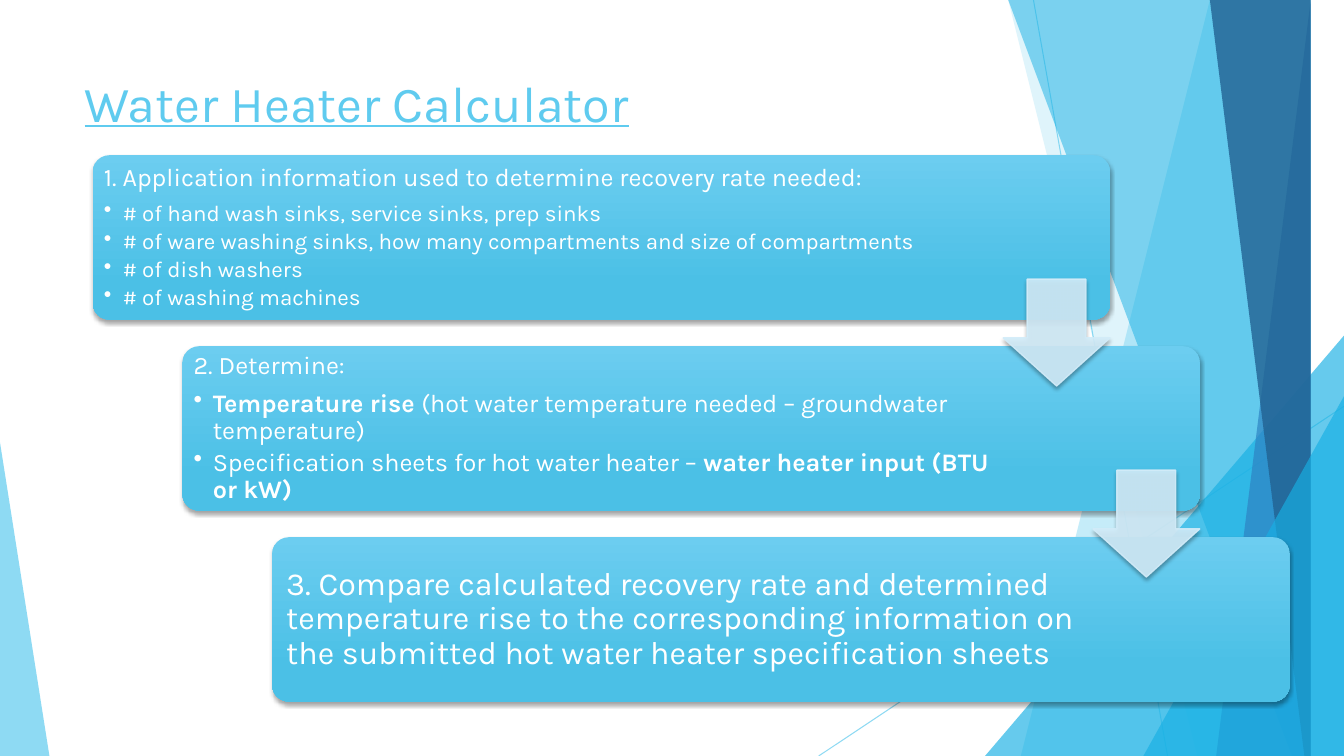
from dataclasses import dataclass

from lxml import etree
from pptx import Presentation
from pptx import util as u
from pptx.dml.color import RGBColor
from pptx.enum import shapes, text
from pptx.oxml import ns


@dataclass(frozen=True)
class Theme:
    font: str = "Karla"
    sky: str = "5FCBEF"
    cyan: str = "17B0E4"
    blue: str = "2E83C3"
    navy: str = "226292"
    white: str = "FFFFFF"
    arrow: str = "D2ECF9"
    shadow: str = "000000"
    card_gradient: tuple = ((0, "6CCDF0"), (0.78, "4BC0E6"))
    title_size: int = 36
    heading_size: int = 18
    small_size: int = 16
    conclusion_size: int = 23
    line_height: float = 1.17


THEME = Theme()
WIDTH, HEIGHT = 13.33, 7.5
SHAPE = shapes.MSO_SHAPE
CARD_WIDTH, CARD_HEIGHT = 10.09, 1.63
CARD_LEFT, CARD_TOP = 0.92, 1.54
STEP_X, STEP_Y = 0.89, 1.895
ARROW_SIZE = 1.06

# Each step: heading, heading size, bullet size, text width, inset, bullets of (words, bold) runs
STEPS = [
    ("1. Application information used to determine recovery rate needed:",
     THEME.heading_size, THEME.small_size, 8.33, 0.07,
     [[("# of hand wash sinks, service sinks, prep sinks", False)],
      [("# of ware washing sinks, how many compartments and size of compartments", False)],
      [("# of dish washers", False)],
      [("# of washing machines", False)]]),
    ("2. Determine:", THEME.heading_size, THEME.heading_size, 8.05, 0.07,
     [[("Temperature rise ", True),
       ("(hot water temperature needed – groundwater temperature)", False)],
      [("Specification sheets for hot water heater – ", False),
       ("water heater input (BTU or kW)", True)]]),
    ("3. Compare calculated recovery rate and determined temperature rise to the "
     "corresponding information on the submitted hot water heater specification sheets",
     THEME.conclusion_size, THEME.conclusion_size, 8.05, 0.1, []),
]


def set_all(target, values):
    for name, value in values.items():
        setattr(target, name, value)


def inches(*lengths):
    return [u.Inches(length) for length in lengths]


def set_alpha(shape, percent):
    for color in shape._element.spPr.iter(ns.qn("a:srgbClr")):
        etree.SubElement(color, ns.qn("a:alpha"), val=str(percent * 1000))


def paint(shape, color, alpha, outlined=False):
    shape.shadow.inherit = False
    shape.fill.solid()
    shape.fill.fore_color.rgb = RGBColor.from_string(color)
    if outlined:
        shape.line.color.rgb = RGBColor.from_string(color)
        shape.line.width = u.Pt(1)
    else:
        shape.line.fill.background()
    set_alpha(shape, alpha)


def cast_shadow(shape):
    shape.shadow.inherit = False
    effects = shape._element.spPr.find(ns.qn("a:effectLst"))
    outer = etree.SubElement(effects, ns.qn("a:outerShdw"), blurRad=str(u.Pt(3)),
                             dist=str(u.Pt(2)), dir="5400000", rotWithShape="0")
    color = etree.SubElement(outer, ns.qn("a:srgbClr"), val=THEME.shadow)
    etree.SubElement(color, ns.qn("a:alpha"), val="35000")


def add_ray(slide, start, end):
    ray = slide.shapes.add_connector(shapes.MSO_CONNECTOR.STRAIGHT, *inches(*start, *end))
    ray.line.color.rgb = RGBColor.from_string(THEME.sky)
    ray.line.width = u.Pt(0.75)
    set_alpha(ray, 70)
    etree.SubElement(ray._element.spPr, ns.qn("a:effectLst"))


def add_facet(slide, top_x, bottom_x, color, alpha):
    """Fill from a slanted left edge to the right side of the slide."""
    builder = slide.shapes.build_freeform(top_x, 0, scale=u.Inches(1))
    builder.add_line_segments([(WIDTH, 0), (WIDTH, HEIGHT), (bottom_x, HEIGHT)])
    paint(builder.convert_to_shape(), color, alpha)


def add_corner(slide, left, top, width, apex, color, alpha):
    """Stand a triangle on the bottom edge of the slide."""
    corner = slide.shapes.add_shape(SHAPE.ISOSCELES_TRIANGLE,
                                    *inches(left, top, width, HEIGHT - top))
    corner.adjustments[0] = apex
    paint(corner, color, alpha)


def add_backdrop(slide):
    add_ray(slide, (10.25, 0), (11.58, HEIGHT))
    add_ray(slide, (WIDTH, 4.03), (8.12, HEIGHT))
    add_facet(slide, 12.28, 10.04, THEME.sky, 36)
    add_facet(slide, 10.5, 11.83, THEME.sky, 20)
    add_corner(slide, 9.77, 3.33, 3.56, 1, THEME.cyan, 66)
    add_facet(slide, 10.21, 12.91, THEME.cyan, 50)
    add_facet(slide, 13.03, 11.92, THEME.blue, 70)
    add_facet(slide, 11.96, 13.18, THEME.navy, 80)
    add_corner(slide, 11.34, 3.93, 1.99, 1, THEME.cyan, 66)
    add_corner(slide, 0, 4.39, 0.49, 0, THEME.sky, 70)


def add_run(paragraph, words, size, color, **styles):
    run = paragraph.add_run()
    run.text = words
    set_all(run.font, dict(name=THEME.font, size=u.Pt(size), **styles))
    run.font.color.rgb = RGBColor.from_string(color)


def add_title(slide, left, top, width, height):
    frame = slide.shapes.add_textbox(*inches(left, top, width, height)).text_frame
    set_all(frame, dict(word_wrap=True, vertical_anchor=text.MSO_ANCHOR.TOP))
    add_run(frame.paragraphs[0], "Water Heater Calculator", THEME.title_size,
            THEME.sky, underline=True)


def space_lines(paragraph, size, share):
    set_all(paragraph, dict(line_spacing=0.9,
                            space_after=u.Pt(round(size * THEME.line_height * share, 1))))


def add_step_text(slide, left, top, step):
    heading, heading_size, bullet_size, width, inset, bullets = step
    box = slide.shapes.add_textbox(*inches(left + 0.04, top + 0.05, width, CARD_HEIGHT - 0.1))
    frame = box.text_frame
    margins = {f"margin_{side}": u.Inches(inset) for side in ("left", "top", "right", "bottom")}
    set_all(frame, dict(word_wrap=True, vertical_anchor=text.MSO_ANCHOR.MIDDLE, **margins))
    space_lines(frame.paragraphs[0], heading_size, 0.35)
    add_run(frame.paragraphs[0], heading, heading_size, THEME.white)
    for runs in bullets:
        paragraph = frame.add_paragraph()
        paragraph.level = 1
        space_lines(paragraph, bullet_size, 0.15)
        properties = paragraph._p.get_or_add_pPr()
        properties.set("marL", str(u.Inches(0.19)))
        properties.set("indent", str(u.Inches(-0.19)))
        etree.SubElement(properties, ns.qn("a:buChar"), char="•")
        for words, bold in runs:
            add_run(paragraph, words, bullet_size, THEME.white, bold=bold)


def add_step(slide, left, top, step):
    card = slide.shapes.add_shape(SHAPE.ROUNDED_RECTANGLE,
                                  *inches(left, top, CARD_WIDTH, CARD_HEIGHT))
    card.adjustments[0] = 0.1
    card.fill.gradient()
    card.fill.gradient_angle = 270
    for stop, (position, color) in zip(card.fill.gradient_stops, THEME.card_gradient):
        stop.position = position
        stop.color.rgb = RGBColor.from_string(color)
    card.line.fill.background()
    cast_shadow(card)
    add_step_text(slide, left, top, step)


def add_step_arrow(slide, left, top):
    """Point from the card at the given corner to the next one."""
    arrow = slide.shapes.add_shape(
        SHAPE.DOWN_ARROW, *inches(left + CARD_WIDTH - ARROW_SIZE, top + 1.23,
                                  ARROW_SIZE, ARROW_SIZE))
    arrow.adjustments[0] = 0.45
    arrow.adjustments[1] = 0.45
    arrow.adjustments[0] = 0.55
    paint(arrow, THEME.arrow, 90, outlined=True)
    cast_shadow(arrow)


def add_staircase(slide, left, top):
    corners = [(left + index * STEP_X, top + index * STEP_Y) for index in range(len(STEPS))]
    for corner, step in zip(corners, STEPS):
        add_step(slide, *corner, step)
    for corner in corners[:-1]:
        add_step_arrow(slide, *corner)


def main():
    presentation = Presentation()
    set_all(presentation, dict(slide_width=u.Inches(WIDTH), slide_height=u.Inches(HEIGHT)))
    slide = presentation.slides.add_slide(presentation.slide_layouts[6])
    add_backdrop(slide)
    add_title(slide, 0.74, 0.67, 9.4, 1.44)
    add_staircase(slide, CARD_LEFT, CARD_TOP)
    presentation.save("out.pptx")


if __name__ == "__main__":
    main()
